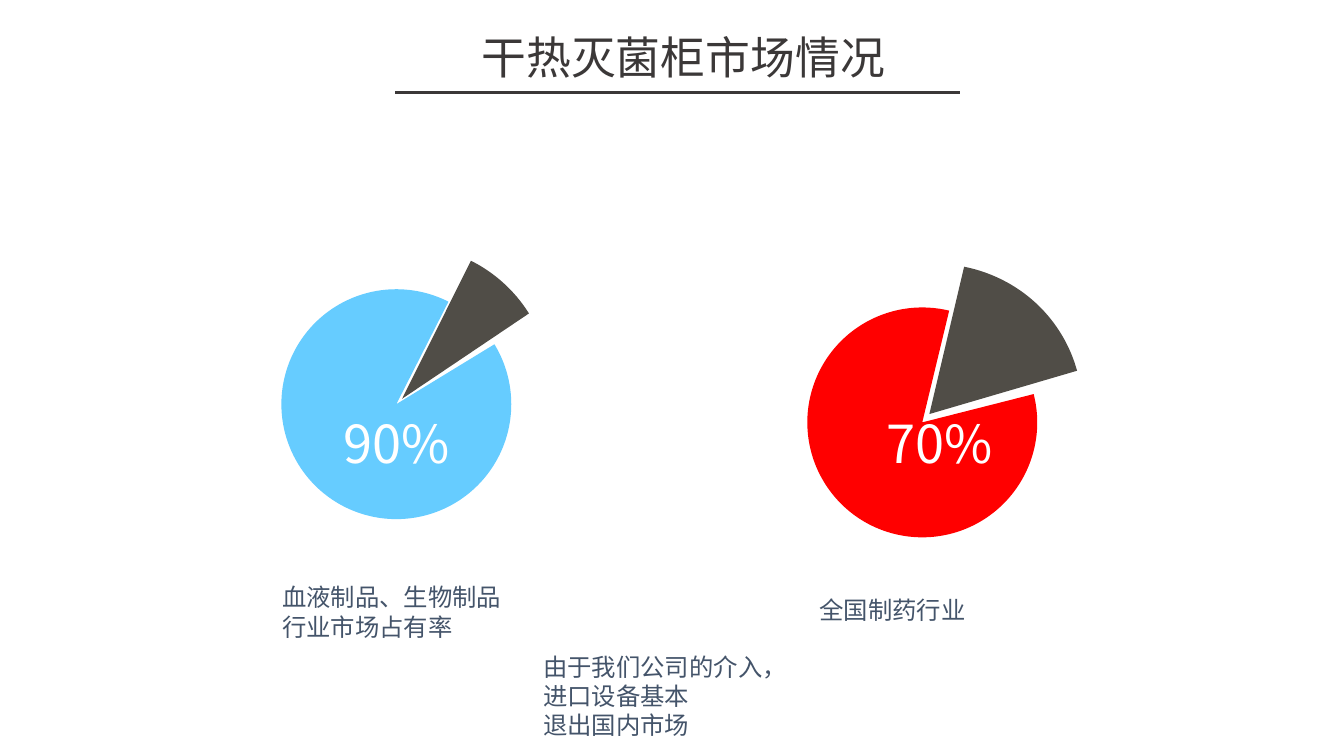
import pptx
import pptx.util
import pptx.dml.color
import pptx.enum.shapes
import pptx.enum.text
import pptx.oxml
import pptx.oxml.ns
from dataclasses import dataclass

Pt = pptx.util.Pt
Align = pptx.enum.text.PP_ALIGN


@dataclass(frozen=True)
class Theme:
    font: str = "Noto Sans CJK SC"
    ink: str = "3B3838"
    note: str = "44546A"
    white: str = "FFFFFF"
    rest: str = "504D47"
    blue: str = "66CCFF"
    red: str = "FF0000"
    head: float = 32
    big: float = 37.4
    body: float = 17.4


THEME = Theme()


def paint(color, code):
    color.rgb = pptx.dml.color.RGBColor.from_string(code)


def write(frame, lines, size, code, align=Align.LEFT):
    frame.word_wrap = True
    frame.auto_size = pptx.enum.text.MSO_AUTO_SIZE.NONE
    frame.vertical_anchor = pptx.enum.text.MSO_ANCHOR.TOP
    frame.text = "\n".join(lines)
    for para in frame.paragraphs:
        para.alignment = align
        para.font.name = THEME.font
        para.font.size = Pt(size)
        paint(para.font.color, code)
        # East Asian typeface
        props = para.font._element
        east = pptx.oxml.parse_xml(
            f'<a:ea {pptx.oxml.ns.nsdecls("a")} typeface="{THEME.font}"/>')
        props.append(east)


def label(slide, box, lines, size, code, align=Align.LEFT):
    text = slide.shapes.add_textbox(*map(Pt, box))
    write(text.text_frame, lines, size, code, align)


def wedge(slide, box, start, end, turn, code):
    """Draw a pie from start to end, in degrees clockwise."""
    kind = pptx.enum.shapes.MSO_SHAPE.PIE
    pie = slide.shapes.add_shape(kind, *map(Pt, box))
    # Angles are stored in 60000ths of a degree, scaled by 100000
    pie.adjustments[0] = start * 0.6
    pie.adjustments[1] = end * 0.6
    pie.rotation = turn
    pie.shadow.inherit = False
    pie.fill.solid()
    paint(pie.fill.fore_color, code)
    pie.line.fill.background()


def header(slide, box, text):
    left, top, width, height = box
    title = slide.shapes.title
    title.left, title.top, title.width, title.height = map(Pt, box)
    write(title.text_frame, [text], THEME.head, THEME.ink, Align.CENTER)
    # Rule below the title
    base = top + height + 3
    rule = slide.shapes.add_connector(
        pptx.enum.shapes.MSO_CONNECTOR.STRAIGHT,
        Pt(left + 12.2), Pt(base), Pt(left + 415.4), Pt(base))
    rule.line.width = Pt(2)
    paint(rule.line.color, THEME.ink)
    rule._element.spPr.append(pptx.oxml.parse_xml(
        f'<a:effectLst {pptx.oxml.ns.nsdecls("a")}/>'))


def share(slide, box, main, rest, shift, code, value, spot):
    """Draw a pie with its remainder pulled out and its value on top."""
    left, top, width, height = box
    wedge(slide, box, *main, code)
    over = (left + shift[0], top + shift[1], 220.3, 212.7)
    wedge(slide, over, *rest, THEME.rest)
    label(slide, (left + spot[0], top + spot[1], spot[2], 52.6), [value],
          THEME.big, THEME.white, Align.CENTER)


def main():
    deck = pptx.Presentation()
    deck.slide_width, deck.slide_height = Pt(960), Pt(540)
    slide = deck.slides.add_slide(deck.slide_layouts[5])

    # Title
    header(slide, (270, 17.3, 436.3, 46), "干热灭菌柜市场情况")

    # Market shares
    share(slide, (201, 206.6, 164.2, 164.2), (328.6, 296.96, 0),
          (0, 29.57, 296.5), (-23.9, -28.1), THEME.blue,
          "90%", (22.9, 83.6, 119.5))
    share(slide, (576.7, 219.6, 164.2, 164.2), (312.74, 250.53, 33),
          (313.78, 14.15, 329.5), (-23, -30.2), THEME.red,
          "70%", (28.1, 70.6, 132.5))

    # Captions
    captions = [
        ((194.4, 412.6, 186.5, 49), ["血液制品、生物制品行业市场占有率"]),
        ((380.9, 462.2, 194.4, 70.6),
         ["由于我们公司的介入，进口设备基本", "退出国内市场"]),
        ((578.2, 421.9, 185, 28.1), ["全国制药行业"]),
    ]
    for box, lines in captions:
        label(slide, box, lines, THEME.body, THEME.note)

    deck.save("out.pptx")


if __name__ == "__main__":
    main()
